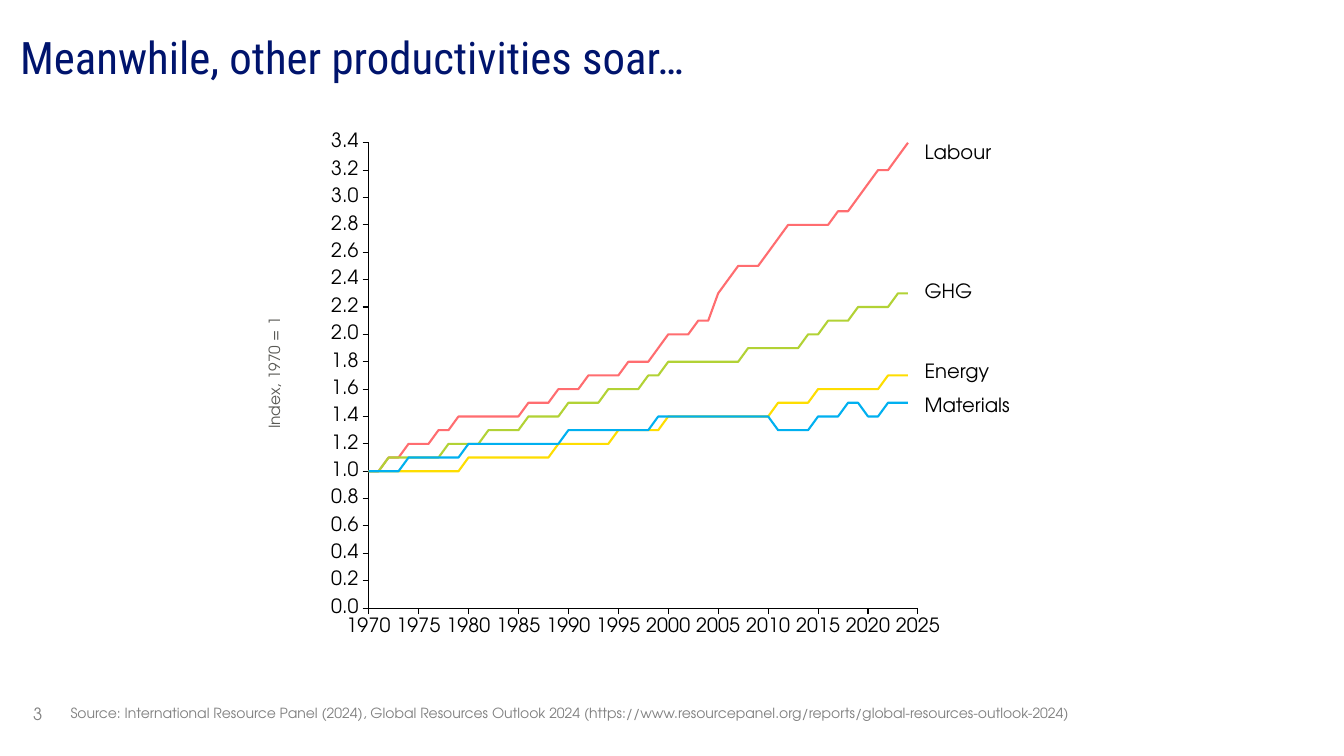
from dataclasses import dataclass

from lxml import etree
from pptx import Presentation
from pptx.chart.data import XyChartData
from pptx.dml.color import RGBColor
from pptx.enum.chart import XL_CHART_TYPE, XL_TICK_LABEL_POSITION, XL_TICK_MARK
from pptx.enum.text import MSO_ANCHOR as ANCHOR, PP_ALIGN as ALIGN
from pptx.oxml.ns import qn
from pptx.util import Emu, Pt

PX = 9144  # 100 px to the inch
HEADING_FONT = "Roboto Condensed"
BODY_FONT = "TeX Gyre Adventor"
NAVY = RGBColor(0x00, 0x14, 0x6D)
BLACK = RGBColor(0x00, 0x00, 0x00)
GREY = RGBColor(0x80, 0x80, 0x80)
DARK_GREY = RGBColor(0x58, 0x58, 0x54)
BLUE = RGBColor(0x00, 0xB0, 0xF0)
GREEN = RGBColor(0xB2, 0xD2, 0x35)
YELLOW = RGBColor(0xFE, 0xDD, 0x00)
RED = RGBColor(0xFF, 0x6D, 0x70)

FIRST_YEAR = 1970


@dataclass(frozen=True)
class Productivity:
    name: str
    color: RGBColor
    label_top: int
    label_width: int
    index: tuple[float, ...]  # one value a year, one decade a row


PRODUCTIVITIES = (
    Productivity("Materials", BLUE, 392, 90, (
        1.0, 1.0, 1.0, 1.0, 1.1, 1.1, 1.1, 1.1, 1.1, 1.1,
        1.2, 1.2, 1.2, 1.2, 1.2, 1.2, 1.2, 1.2, 1.2, 1.2,
        1.3, 1.3, 1.3, 1.3, 1.3, 1.3, 1.3, 1.3, 1.3, 1.4,
        1.4, 1.4, 1.4, 1.4, 1.4, 1.4, 1.4, 1.4, 1.4, 1.4,
        1.4, 1.3, 1.3, 1.3, 1.3, 1.4, 1.4, 1.4, 1.5, 1.5,
        1.4, 1.4, 1.5, 1.5, 1.5)),
    Productivity("GHG", GREEN, 279, 53, (
        1.0, 1.0, 1.1, 1.1, 1.1, 1.1, 1.1, 1.1, 1.2, 1.2,
        1.2, 1.2, 1.3, 1.3, 1.3, 1.3, 1.4, 1.4, 1.4, 1.4,
        1.5, 1.5, 1.5, 1.5, 1.6, 1.6, 1.6, 1.6, 1.7, 1.7,
        1.8, 1.8, 1.8, 1.8, 1.8, 1.8, 1.8, 1.8, 1.9, 1.9,
        1.9, 1.9, 1.9, 1.9, 2.0, 2.0, 2.1, 2.1, 2.1, 2.2,
        2.2, 2.2, 2.2, 2.3, 2.3)),
    Productivity("Energy", YELLOW, 359, 70, (
        1.0, 1.0, 1.0, 1.0, 1.0, 1.0, 1.0, 1.0, 1.0, 1.0,
        1.1, 1.1, 1.1, 1.1, 1.1, 1.1, 1.1, 1.1, 1.1, 1.2,
        1.2, 1.2, 1.2, 1.2, 1.2, 1.3, 1.3, 1.3, 1.3, 1.3,
        1.4, 1.4, 1.4, 1.4, 1.4, 1.4, 1.4, 1.4, 1.4, 1.4,
        1.4, 1.5, 1.5, 1.5, 1.5, 1.6, 1.6, 1.6, 1.6, 1.6,
        1.6, 1.6, 1.7, 1.7, 1.7)),
    Productivity("Labour", RED, 141, 72, (
        1.0, 1.0, 1.1, 1.1, 1.2, 1.2, 1.2, 1.3, 1.3, 1.4,
        1.4, 1.4, 1.4, 1.4, 1.4, 1.4, 1.5, 1.5, 1.5, 1.6,
        1.6, 1.6, 1.7, 1.7, 1.7, 1.7, 1.8, 1.8, 1.8, 1.9,
        2.0, 2.0, 2.0, 2.1, 2.1, 2.3, 2.4, 2.5, 2.5, 2.5,
        2.6, 2.7, 2.8, 2.8, 2.8, 2.8, 2.8, 2.9, 2.9, 3.0,
        3.1, 3.2, 3.2, 3.3, 3.4)),
)


def px(n: int) -> Emu:
    return Emu(n * PX)


def add_text(slide, text: str, left: int, top: int, width: int, height: int, *,
             size: int, color: RGBColor, font: str = BODY_FONT, align=ALIGN.LEFT,
             anchor=ANCHOR.MIDDLE, wrap: bool = True, spacing: float = 0.9,
             rotation: int = 0) -> None:
    sp = slide.shapes.add_textbox(px(left), px(top), px(width), px(height))
    sp.rotation = rotation
    tf = sp.text_frame
    tf.word_wrap = wrap
    tf.vertical_anchor = anchor
    tf.margin_left = tf.margin_top = tf.margin_right = tf.margin_bottom = 0
    p = tf.paragraphs[0]
    p.alignment = align
    p.line_spacing = spacing
    r = p.add_run()
    r.text = text
    r.font.name = font
    r.font.size = Pt(size)
    r.font.color.rgb = color


def style_axis(axis, low: float, high: float, step: float, number_format: str) -> None:
    axis.minimum_scale, axis.maximum_scale, axis.major_unit = low, high, step
    axis.has_major_gridlines = axis.has_minor_gridlines = False
    axis.has_title = False
    axis.major_tick_mark = XL_TICK_MARK.OUTSIDE
    axis.minor_tick_mark = XL_TICK_MARK.NONE
    axis.tick_label_position = XL_TICK_LABEL_POSITION.LOW
    axis.format.line.color.rgb = BLACK
    axis.format.line.width = Pt(0.75)
    labels = axis.tick_labels
    labels.number_format = number_format
    labels.number_format_is_linked = False
    labels.font.name = BODY_FONT
    labels.font.size = Pt(14)
    labels.font.color.rgb = BLACK


def place_plot(chart, **fractions: float) -> None:
    """Fix the inner plot area at fractions x, y, w, h of the chart frame."""
    plot_area = chart.element.find(".//" + qn("c:plotArea"))
    for old in plot_area.findall(qn("c:layout")):
        plot_area.remove(old)
    layout = etree.Element(qn("c:layout"))
    plot_area.insert(0, layout)
    manual = etree.SubElement(layout, qn("c:manualLayout"))
    settings = {"layoutTarget": "inner", "xMode": "edge", "yMode": "edge", **fractions}
    for tag, value in settings.items():
        etree.SubElement(manual, qn(f"c:{tag}")).set("val", str(value))


def add_productivity_chart(slide) -> None:
    data = XyChartData()
    for item in PRODUCTIVITIES:
        series = data.add_series(item.name)
        for year, value in enumerate(item.index, FIRST_YEAR):
            series.add_data_point(year, value)
    chart = slide.shapes.add_chart(XL_CHART_TYPE.XY_SCATTER_LINES_NO_MARKERS,
                                   px(306), px(119), px(648), px(540), data).chart
    chart.has_title = chart.has_legend = False
    chart.font.name = BODY_FONT
    chart.font.size = Pt(10)
    chart.font.color.rgb = BLACK
    chart.plots[0].vary_by_categories = False
    style_axis(chart.category_axis, FIRST_YEAR, 2025, 5, '0;"-"0')
    style_axis(chart.value_axis, 0, 3.4, 0.2, '#,##0.0;"-"#,##0.0')
    place_plot(chart, x=0.092, y=0.042, w=0.841, h=0.855)
    for series, item in zip(chart.plots[0].series, PRODUCTIVITIES):
        series.smooth = False
        series.format.line.color.rgb = item.color
        series.format.line.width = Pt(1.5)


def main() -> None:
    prs = Presentation()
    prs.slide_width, prs.slide_height = px(1333), px(750)
    slide = prs.slides.add_slide(prs.slide_layouts[6])

    add_text(slide, "3", 5, 682, 65, 52, size=12, color=GREY, align=ALIGN.CENTER, spacing=1.0)
    add_text(slide, "Meanwhile, other productivities soar…", 20, 20, 1294, 78,
             size=32, color=NAVY, font=HEADING_FONT)
    add_text(slide, "Source: International Resource Panel (2024), Global Resources Outlook 2024 "
             "(https://www.resourcepanel.org/reports/global-resources-outlook-2024)",
             70, 689, 1035, 39, size=10, color=GREY)
    add_productivity_chart(slide)
    for item in PRODUCTIVITIES:
        add_text(slide, item.name, 917, item.label_top, item.label_width, 21,
                 size=14, color=BLACK, wrap=False)
    add_text(slide, "Index, 1970 = 1", 169, 313, 206, 19, size=11, color=DARK_GREY,
             anchor=ANCHOR.TOP, spacing=1.0, rotation=270)

    prs.save("out.pptx")


if __name__ == "__main__":
    main()
